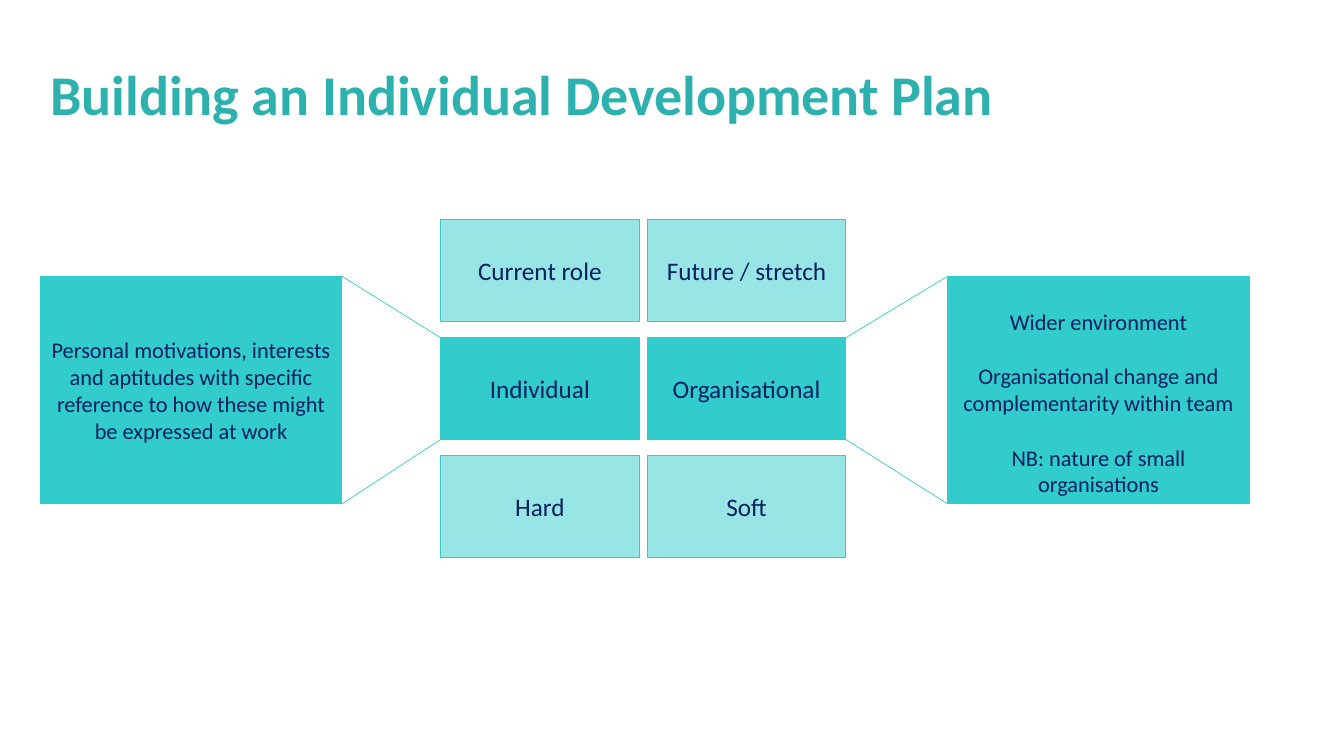
import pptx
import pptx.util
import pptx.dml.color
import pptx.enum.shapes
import pptx.enum.text
import pptx.oxml.ns
import lxml.etree

THEME = {
    "font": "Calibri",
    "title": "2CB1AE", "teal": "33CCCC", "navy": "002060",
    "title_pt": 40, "tile_pt": 18, "panel_pt": 16,
    "border_pt": 0.75, "link_pt": 0.5,
}
Inches, Pt = pptx.util.Inches, pptx.util.Pt
RGB = pptx.dml.color.RGBColor.from_string
ALIGN, ANCHOR = pptx.enum.text.PP_ALIGN, pptx.enum.text.MSO_ANCHOR
qn = pptx.oxml.ns.qn


def write(sp, text, size, color=THEME["navy"], bold=False, align=ALIGN.CENTER,
          anchor=ANCHOR.MIDDLE, spacing=None, gap=0, top=0.05):
    """Fill a shape with text, one paragraph per line."""
    tf = sp.text_frame
    tf.word_wrap = True
    tf.vertical_anchor = anchor
    tf.margin_top = Inches(top)
    for i, line in enumerate(text.split("\n")):
        p = tf.add_paragraph() if i else tf.paragraphs[0]
        p.alignment = align
        p.line_spacing = spacing
        if i and gap:
            p.space_before = Pt(gap)
        r = p.add_run()
        r.text = line
        r.font.name, r.font.size, r.font.bold = THEME["font"], Pt(size), bold
        r.font.color.rgb = RGB(color)


def box(x, y, w, h, alpha=100):
    """Add a teal rectangle with the given opacity in percent."""
    sp = s.shapes.add_shape(pptx.enum.shapes.MSO_SHAPE.RECTANGLE,
                            Inches(x), Inches(y), Inches(w), Inches(h))
    sp.shadow.inherit = False
    sp.fill.solid()
    sp.fill.fore_color.rgb = RGB(THEME["teal"])
    sp.line.color.rgb = RGB(THEME["teal"])
    sp.line.width = Pt(THEME["border_pt"])
    if alpha < 100:
        clr = sp.fill._xPr.find(qn("a:solidFill"))[0]
        lxml.etree.SubElement(clr, qn("a:alpha"), val=str(alpha * 1000))
    return sp


prs = pptx.Presentation()
prs.slide_width, prs.slide_height = Inches(13.33), Inches(7.5)
s = prs.slides.add_slide(prs.slide_layouts[6])

# Title
sp = s.shapes.add_textbox(Inches(0.4), Inches(0.24), Inches(11.5), Inches(1.45))
write(sp, "Building an Individual Development Plan", THEME["title_pt"],
      color=THEME["title"], bold=True, align=ALIGN.LEFT, spacing=0.9)

# Central grid: the middle row is solid, the others half transparent
grid_x, grid_y = 4.37, 2.18
tile_w, tile_h = 1.97, 1.01
col_step, row_step = 2.05, 1.17
tiles = [("Current role", "Future / stretch"),
         ("Individual", "Organisational"),
         ("Hard", "Soft")]
for row, labels in enumerate(tiles):
    for col, label in enumerate(labels):
        sp = box(grid_x + col * col_step, grid_y + row * row_step,
                 tile_w, tile_h, alpha=100 if row == 1 else 50)
        write(sp, label, THEME["tile_pt"])

# Side panels
left_x, right_x, panel_y = 0.4, 9.4, 2.74
panel_w, panel_h = 2.99, 2.26
write(box(left_x, panel_y, panel_w, panel_h),
      "Personal motivations, interests and aptitudes with specific "
      "reference to how these might be expressed at work", THEME["panel_pt"])
write(box(right_x, panel_y, panel_w, panel_h),
      "Wider environment\n"
      "Organisational change and complementarity within team\n"
      "NB: nature of small organisations",
      THEME["panel_pt"], anchor=ANCHOR.TOP, gap=19.5, top=0.32)

# Lines from panel corners to the corners of the middle row
middle_y = grid_y + row_step
grid_right = grid_x + col_step + tile_w
for panel_x, tile_x in ((left_x + panel_w, grid_x), (right_x, grid_right)):
    for y1, y2 in ((panel_y, middle_y), (panel_y + panel_h, middle_y + tile_h)):
        link = s.shapes.add_connector(pptx.enum.shapes.MSO_CONNECTOR.STRAIGHT,
                                      Inches(panel_x), Inches(y1),
                                      Inches(tile_x), Inches(y2))
        link.line.color.rgb = RGB(THEME["teal"])
        link.line.width = Pt(THEME["link_pt"])
        lxml.etree.SubElement(link._element.spPr, qn("a:effectLst"))

prs.save("out.pptx")
